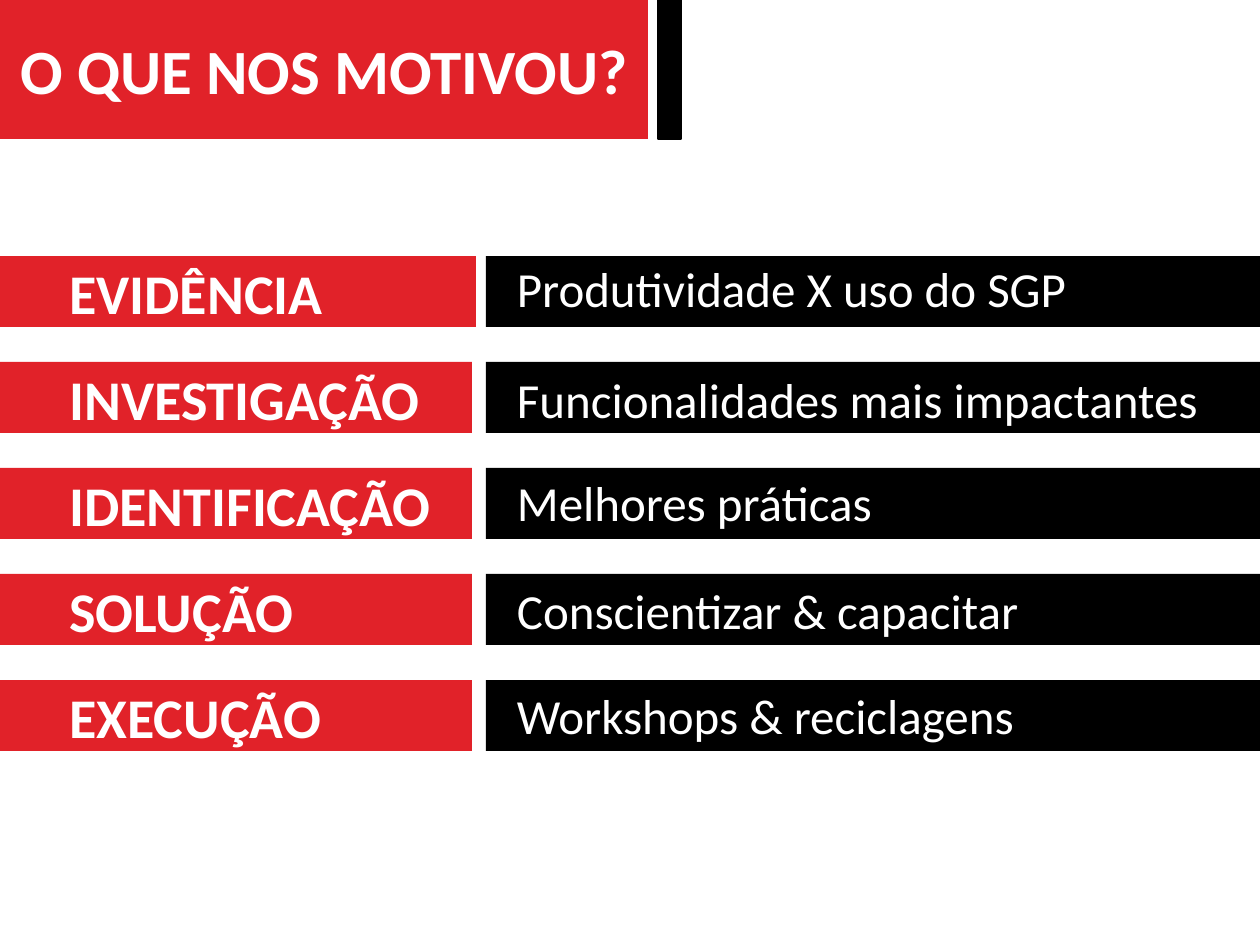
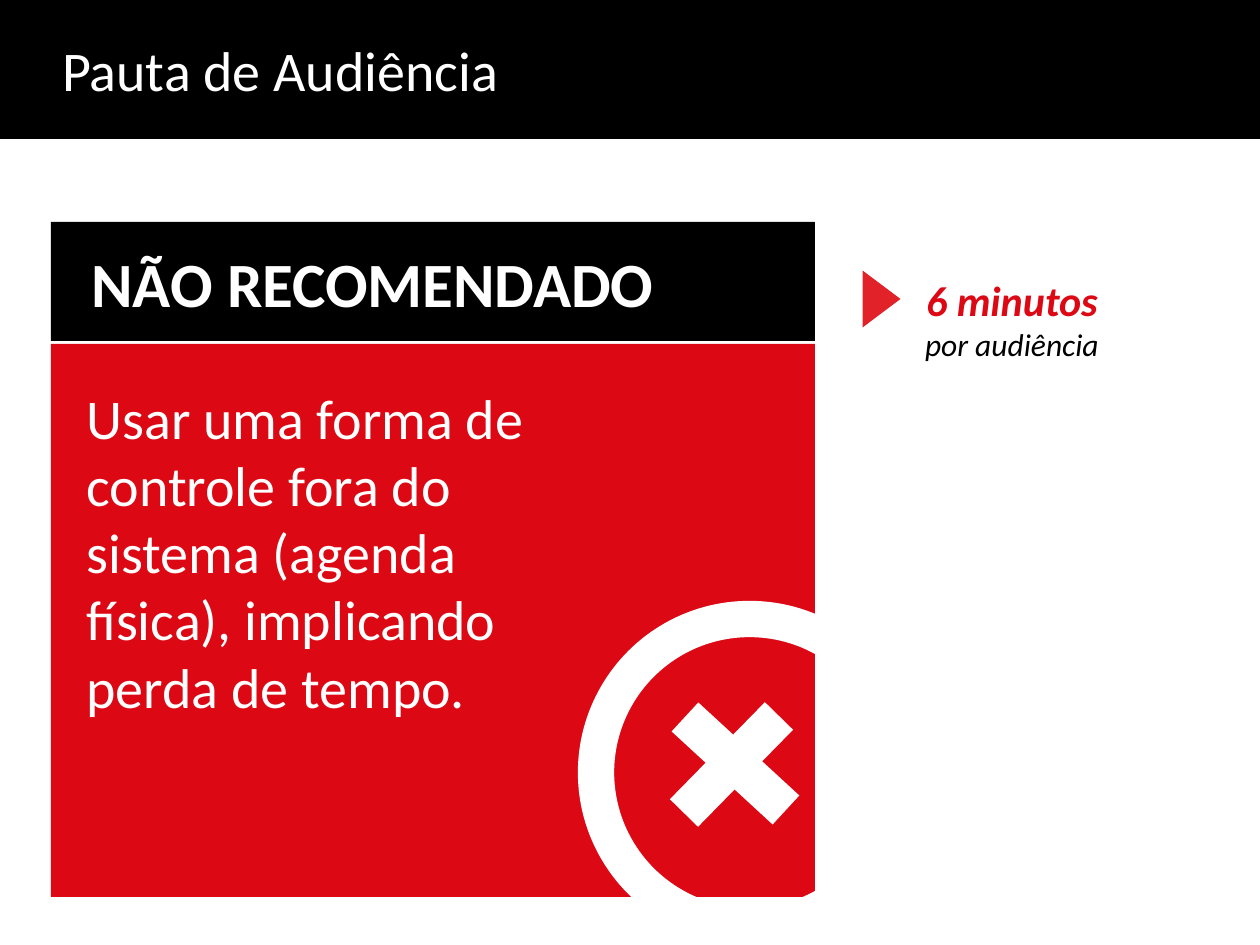
from dataclasses import dataclass

from lxml import etree
from pptx import Presentation
from pptx import util as u
from pptx.dml.color import RGBColor
from pptx.enum import shapes, text
from pptx.oxml.ns import qn

PX_PER_INCH = 126
SHAPE = shapes.MSO_SHAPE
ALIGN = text.PP_ALIGN
ANCHOR = text.MSO_ANCHOR


@dataclass(frozen=True)
class Theme:
    font: str = "Calibri"
    white: RGBColor = RGBColor(0xFF, 0xFF, 0xFF)
    black: RGBColor = RGBColor(0x00, 0x00, 0x00)
    red: RGBColor = RGBColor(0xE1, 0x22, 0x29)
    deep_red: RGBColor = RGBColor(0xDC, 0x08, 0x14)
    heading: int = 36
    body: int = 32
    detail: int = 28
    callout: int = 24
    note: int = 18
    ring_width: float = 20.75
    cross_width: float = 22.5


@dataclass(frozen=True)
class Box:
    x: int
    y: int
    w: int
    h: int

    def emu(self) -> list[u.Emu]:
        return [px(v) for v in (self.x, self.y, self.w, self.h)]


@dataclass(frozen=True)
class Step:
    label: str
    detail: str
    label_w: int = 472
    text_drop: int = 0


T = Theme()
SLIDE_W, SLIDE_H = 1260, 945
TITLE_H = 139
ROW_TOP, ROW_PITCH, ROW_H = 256, 106, 71
DETAIL_X, DETAIL_TEXT_X = 486, 508
STEPS = (
    Step("EVIDÊNCIA", "Produtividade X uso do SGP", label_w=476),
    Step("INVESTIGAÇÃO", "Funcionalidades mais impactantes", text_drop=5),
    Step("IDENTIFICAÇÃO", "Melhores práticas", text_drop=2),
    Step("SOLUÇÃO", "Conscientizar & capacitar", text_drop=4),
    Step("EXECUÇÃO", "Workshops & reciclagens", text_drop=3),
)


def px(value: int) -> u.Emu:
    return u.Emu(round(value * 914400 / PX_PER_INCH))


def write(tf, words: str, *, size: int, color=T.white, bold=False, italic=False,
          align=ALIGN.LEFT, spacing=None, new=False) -> None:
    """Fill the first paragraph, or add one when new is set."""
    p = tf.add_paragraph() if new else tf.paragraphs[0]
    p.alignment = align
    if spacing:
        p.line_spacing = spacing
    r = p.add_run()
    r.text = words
    f = r.font
    f.name, f.size, f.bold, f.italic = T.font, u.Pt(size), bold, italic
    f.color.rgb = color


def add_shape(parent, box: Box, fill=None, *, kind=SHAPE.RECTANGLE, line=None,
              line_width: float = 1):
    sp = parent.add_shape(kind, *box.emu())
    sp.shadow.inherit = False
    if fill is None:
        sp.fill.background()
    else:
        sp.fill.solid()
        sp.fill.fore_color.rgb = fill
    if line is None:
        sp.line.fill.background()
    else:
        sp.line.color.rgb = line
        sp.line.width = u.Pt(line_width)
    return sp


def add_text(parent, box: Box, *, wrap=True, anchor=ANCHOR.TOP, inset=None):
    tf = parent.add_textbox(*box.emu()).text_frame
    tf.word_wrap = wrap
    tf.vertical_anchor = anchor
    if inset is not None:
        tf.margin_left = tf.margin_right = tf.margin_top = tf.margin_bottom = px(inset)
    return tf


def add_bar(parent, start: tuple[int, int], end: tuple[int, int]) -> None:
    """Draw one thick white stroke of the cross."""
    cx = parent.add_connector(shapes.MSO_CONNECTOR.STRAIGHT,
                              *(px(v) for v in (*start, *end)))
    cx.line.color.rgb = T.white
    cx.line.width = u.Pt(T.cross_width)
    etree.SubElement(cx._element.spPr, qn("a:effectLst"))


def titled_slide(prs, words: str, width: int, fill: RGBColor, *, inset: int = 13, **fmt):
    """Add a slide whose title sits in a coloured band at the top left."""
    s = prs.slides.add_slide(prs.slide_layouts[5])
    title = s.shapes.title
    title.left, title.top, title.width, title.height = Box(0, 0, width, TITLE_H).emu()
    title.fill.solid()
    title.fill.fore_color.rgb = fill
    tf = title.text_frame
    tf.auto_size = text.MSO_AUTO_SIZE.NONE
    tf.word_wrap = True
    tf.vertical_anchor = ANCHOR.MIDDLE
    tf.margin_left = px(inset)
    write(tf, words, **fmt)
    return s


def add_step(parent, step: Step, top: int) -> None:
    add_shape(parent, Box(DETAIL_X, top, SLIDE_W - DETAIL_X, ROW_H), T.black)
    add_shape(parent, Box(0, top, step.label_w, ROW_H), T.red)
    label = add_text(parent, Box(57, top - 4, 415, 81))
    write(label, step.label, size=T.body, bold=True)
    detail_box = Box(DETAIL_TEXT_X, top + step.text_drop, SLIDE_W - DETAIL_TEXT_X, ROW_H)
    detail = add_text(parent, detail_box, anchor=ANCHOR.MIDDLE, inset=9)
    write(detail, step.detail, size=T.detail, spacing=0.9)


def build_motivation(prs) -> None:
    s = titled_slide(prs, "O QUE NOS MOTIVOU?", 648, T.red,
                     size=T.heading, bold=True, align=ALIGN.CENTER)
    add_shape(s.shapes, Box(658, 0, 23, TITLE_H), T.black, line=T.black)
    for i, step in enumerate(STEPS):
        add_step(s.shapes, step, ROW_TOP + i * ROW_PITCH)


def build_hearing_agenda(prs) -> None:
    s = titled_slide(prs, "Pauta de Audiência", SLIDE_W, T.black, inset=62, size=T.body)

    card = s.shapes.add_group_shape().shapes
    add_shape(card, Box(51, 222, 764, 119), T.black)
    add_shape(card, Box(51, 344, 764, 553), T.deep_red)
    write(add_text(card, Box(79, 238, 677, 89)), "NÃO RECOMENDADO",
          size=T.heading, bold=True)

    add_shape(s.shapes, Box(596, 619, 307, 307), kind=SHAPE.OVAL,
              line=T.white, line_width=T.ring_width)
    cross = s.shapes.add_group_shape().shapes
    add_bar(cross, (685, 717), (786, 810))
    add_bar(cross, (779, 716), (684, 813))

    advice = add_text(s.shapes, Box(74, 377, 536, 352))
    write(advice, "Usar uma forma de controle fora do sistema (agenda física), "
                  "implicando perda de tempo.", size=T.body)

    marker = add_shape(s.shapes, Box(853, 280, 57, 38), T.red,
                       kind=SHAPE.ISOSCELES_TRIANGLE)
    marker.rotation = 90
    timing = add_text(s.shapes, Box(911, 268, 202, 102), wrap=False)
    write(timing, "6 minutos", size=T.callout, color=T.deep_red,
          bold=True, italic=True, align=ALIGN.CENTER)
    write(timing, "por audiência", size=T.note, color=T.black,
          italic=True, align=ALIGN.CENTER, new=True)


def main() -> None:
    prs = Presentation()
    prs.slide_width, prs.slide_height = px(SLIDE_W), px(SLIDE_H)
    build_motivation(prs)
    build_hearing_agenda(prs)
    prs.save("out.pptx")


if __name__ == "__main__":
    main()
